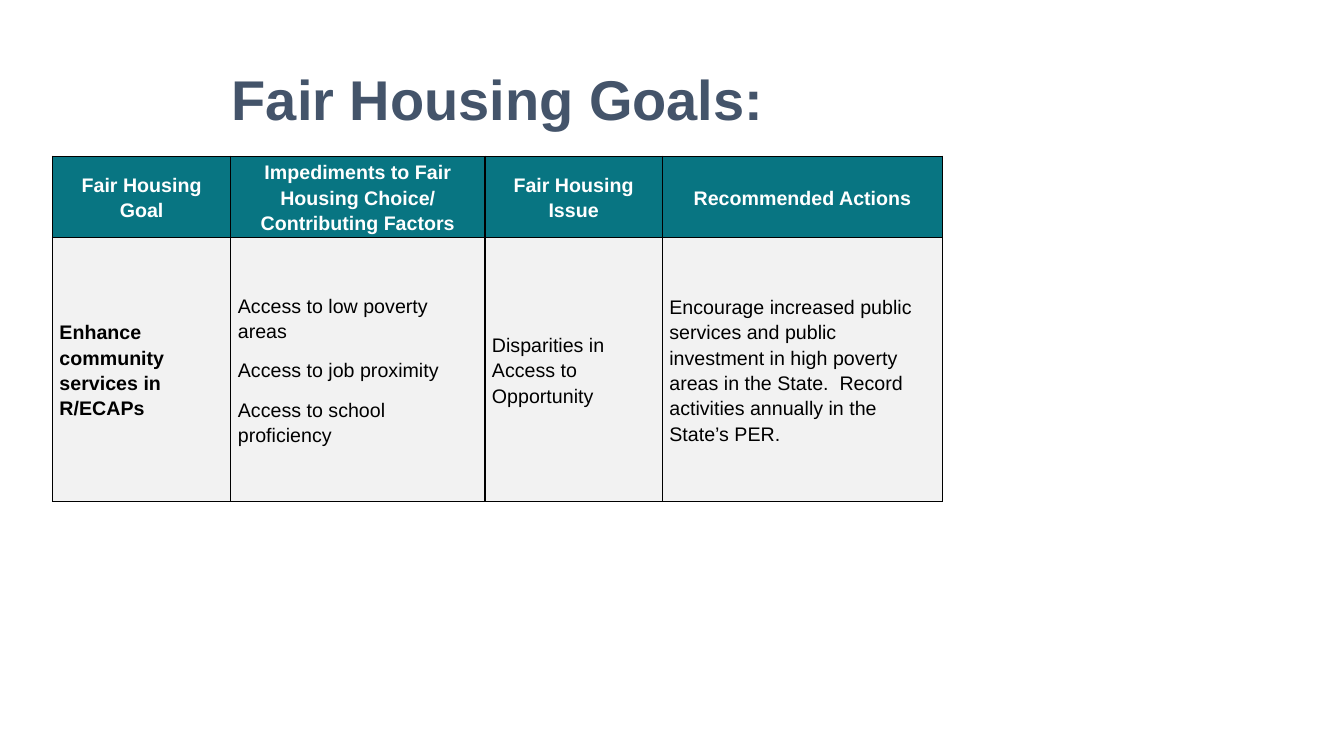
from lxml import etree
from pptx import Presentation
from pptx.dml.color import RGBColor
from pptx.enum.text import MSO_ANCHOR, PP_ALIGN
from pptx.oxml.ns import qn
from pptx.util import Inches, Pt

MIDDLE = MSO_ANCHOR.MIDDLE
CENTER, LEFT = PP_ALIGN.CENTER, PP_ALIGN.LEFT
COLORS = {"title": "44546A", "header": "087582", "body": "F2F2F2",
          "white": "FFFFFF", "black": "000000"}


def style_font(paragraph, size, color, bold):
    font = paragraph.font
    values = {"name": "Arial", "size": Pt(size), "bold": bold}
    for name, value in values.items():
        setattr(font, name, value)
    font.color.rgb = RGBColor.from_string(COLORS[color])


def add_borders(cell):
    properties = cell._tc.get_or_add_tcPr()
    for side in ("lnL", "lnR", "lnT", "lnB"):
        line = etree.SubElement(properties, qn(f"a:{side}"), w=str(Pt(1)))
        fill = etree.SubElement(line, qn("a:solidFill"))
        etree.SubElement(fill, qn("a:srgbClr"), val=COLORS["black"])


presentation = Presentation()
presentation.slide_width = Inches(13.33)
presentation.slide_height = Inches(7.5)
slide = presentation.slides.add_slide(presentation.slide_layouts[6])

# Title
title = slide.shapes.add_textbox(Inches(0.3), Inches(0.57), Inches(9.27), Inches(0.8))
title_frame = title.text_frame
title_frame.word_wrap = True
title_frame.vertical_anchor = MIDDLE
title_frame.text = "Fair Housing Goals:"
title_paragraph = title_frame.paragraphs[0]
title_paragraph.alignment = CENTER
style_font(title_paragraph, 40, "title", True)

# Goals table: each cell is a list of paragraphs
goal_rows = [
    [["Fair Housing Goal"],
     ["Impediments to Fair Housing Choice/", "Contributing Factors"],
     ["Fair Housing Issue"],
     ["Recommended Actions"]],
    [["Enhance community services in R/ECAPs"],
     ["Access to low poverty areas", "Access to job proximity",
      "Access to school proficiency"],
     ["Disparities in Access to Opportunity"],
     ["Encourage increased public services and public investment in high "
      "poverty areas in the State.  Record activities annually in the "
      "State’s PER."]],
]
column_widths = [1.77, 2.52, 1.76, 2.78]
row_heights = [0.76, 2.62]
row_formats = [
    {"fill": "header", "text": "white", "align": CENTER, "after": 0},
    {"fill": "body", "text": "black", "align": LEFT, "after": 10},
]
cell_format = {"vertical_anchor": MIDDLE,
               "margin_left": Inches(0.07), "margin_right": Inches(0.07),
               "margin_top": 0, "margin_bottom": 0}

table = slide.shapes.add_table(
    len(row_heights), len(column_widths), Inches(0.52), Inches(1.55),
    Inches(sum(column_widths)), Inches(sum(row_heights))).table
for column, width in zip(table.columns, column_widths):
    column.width = Inches(width)
for row, height in zip(table.rows, row_heights):
    row.height = Inches(height)

for row_index, (goal_row, row_format) in enumerate(zip(goal_rows, row_formats)):
    for column_index, lines in enumerate(goal_row):
        cell = table.cell(row_index, column_index)
        for name, value in cell_format.items():
            setattr(cell, name, value)
        add_borders(cell)
        cell.fill.solid()
        cell.fill.fore_color.rgb = RGBColor.from_string(COLORS[row_format["fill"]])
        cell.text_frame.text = "\n".join(lines)
        for paragraph in cell.text_frame.paragraphs:
            paragraph.alignment = row_format["align"]
            paragraph.line_spacing = 1.15
            paragraph.space_after = Pt(row_format["after"])
            style_font(paragraph, 14, row_format["text"],
                       row_index == 0 or column_index == 0)

presentation.save("out.pptx")
